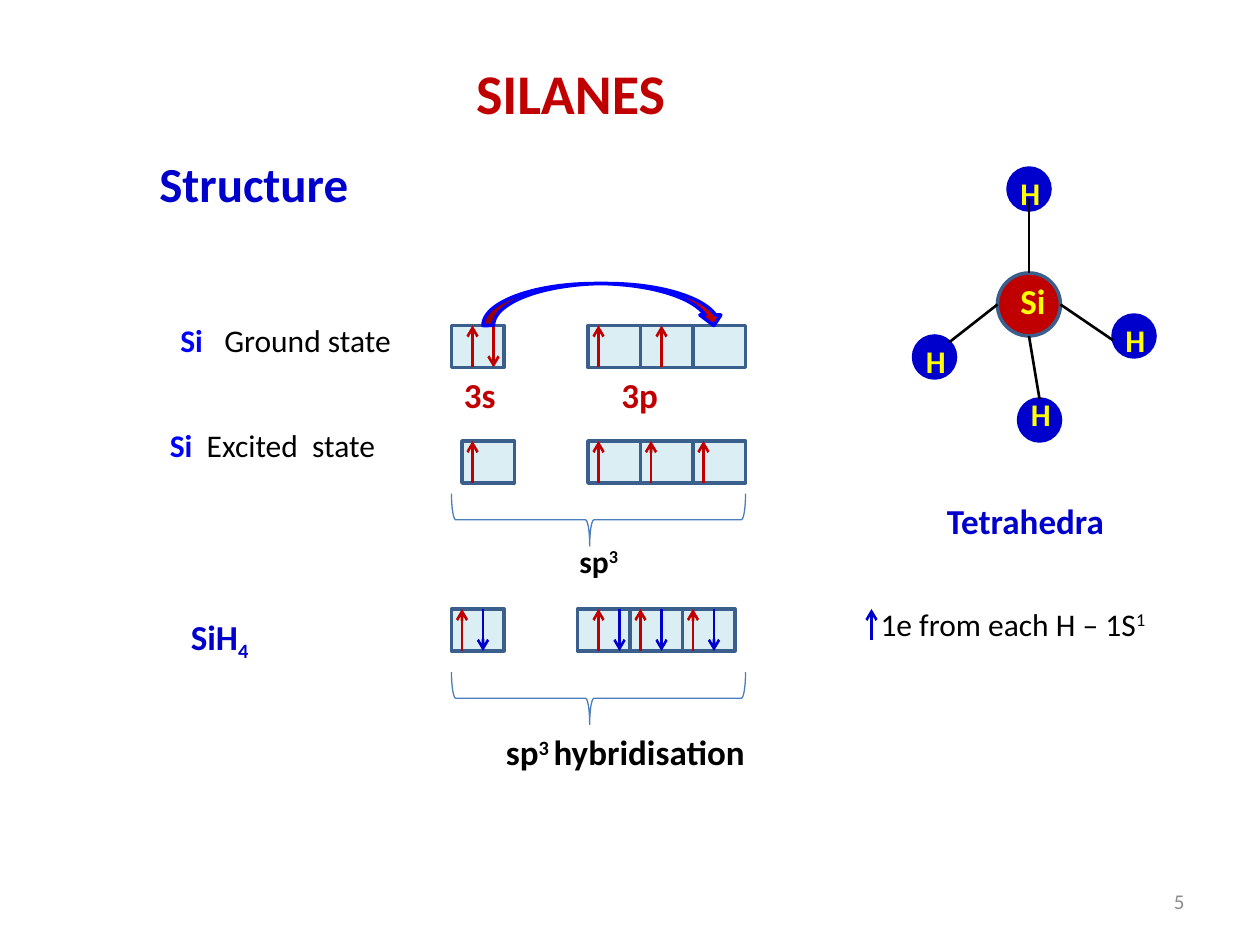
from pptx import Presentation
from pptx.dml.color import RGBColor
from pptx.enum.shapes import MSO_CONNECTOR, MSO_SHAPE as SHAPE
from pptx.enum.text import MSO_ANCHOR, MSO_AUTO_SIZE, PP_ALIGN
from pptx.oxml.ns import qn
from pptx.util import Pt
from lxml.etree import SubElement

PX = 7620  # EMU per px, 120 px to the inch
RED = RGBColor(0xC0, 0x00, 0x00)
NAVY = RGBColor(0x00, 0x00, 0xCC)
BLUE = RGBColor(0x00, 0x00, 0xFF)
BLACK = RGBColor(0x00, 0x00, 0x00)
YELLOW = RGBColor(0xFF, 0xFF, 0x00)
GREY = RGBColor(0x8C, 0x8C, 0x8C)
PALE = RGBColor(0xDB, 0xEE, 0xF4)
STEEL = RGBColor(0x3A, 0x5F, 0x8C)
BRACE = RGBColor(0x4B, 0x7E, 0xBC)

# Labels: (left, top, width, height), size, spans of (text, colour, bold, baseline)
TITLE = ((440, 50, 214, 77), 32, [("SILANES", RED, True, 0), (" ", RED, False, 0)])
NUMBER = ((860, 834, 280, 48), 12, [("5", GREY, False, 0)])
HYDROGEN_NOTE = ((820, 570, 328, 48), 18,
                 [(" 1e from each H – 1S", BLACK, False, 0), ("1", BLACK, False, 30)])
LABELS = [
    ((140, 140, 206, 68), 28, [("Structure", NAVY, True, 0)]),
    ((160, 300, 240, 48), 18, [("Si  ", BLUE, True, 0), (" Ground state", BLACK, False, 0)]),
    ((150, 400, 228, 48), 18, [("Si ", BLUE, True, 0), (" Excited  state", BLACK, False, 0)]),
    ((170, 580, 82, 53), 20, [("SiH", NAVY, True, 0), ("4", NAVY, True, -25)]),
    ((430, 350, 55, 53), 20, [("3s", RED, True, 0)]),
    ((580, 350, 59, 53), 20, [("3p", RED, True, 0)]),
    ((540, 510, 62, 48), 18, [("sp", BLACK, True, 0), ("3", BLACK, True, 30)]),
    ((470, 690, 264, 53), 20, [("sp", BLACK, True, 0), ("3 ", BLACK, True, 30),
                               ("hybridisation", BLACK, True, 0)]),
    ((890, 470, 175, 53), 20, [("Tetrahedra", NAVY, True, 0)]),
]

# Orbital rows: top, s box left, first p box left, x of up arrows, x of down arrows, down colour
ORBITAL_W, ORBITAL_H = 50, 40
ROWS = [
    (310, 430, 560, [450, 570, 630], [470], RED),
    (420, 440, 560, [450, 570, 620, 670], [], RED),
    (580, 430, 550, [440, 570, 610, 660], [460, 590, 630, 680], NAVY),
]
BRACE_TOPS = [355, 525]

# Molecule: hydrogen (left, top, label top) and bonds
HYDROGENS = [(960, 160, 160), (1060, 300, 300), (970, 380, 370), (870, 320, 320)]
BONDS = [(980, 190, 980, 260), (1010, 290, 1060, 324),
         (980, 320, 990, 380), (950, 290, 904, 326)]

deck = Presentation()
deck.slide_width, deck.slide_height = 1200 * PX, 900 * PX
page = deck.slides.add_slide(deck.slide_layouts[6])


def scaled(lengths):
    return [length * PX for length in lengths]


def add_label(place, size, spans, align=PP_ALIGN.LEFT, wrap=False):
    box = page.shapes.add_textbox(*scaled(place))
    frame = box.text_frame
    frame.word_wrap = wrap
    frame.auto_size = MSO_AUTO_SIZE.SHAPE_TO_FIT_TEXT
    para = frame.paragraphs[0]
    para.alignment = align
    for text, colour, bold, baseline in spans:
        span = para.add_run()
        span.text = text
        font = span.font
        font.name, font.size, font.bold = "Calibri", Pt(size), bold
        font.color.rgb = colour
        if baseline:
            span._r.get_or_add_rPr().set("baseline", str(baseline * 1000))
    return box


def add_figure(kind, place, fill, line, weight=2):
    figure = page.shapes.add_shape(kind, *scaled(place))
    figure.shadow.inherit = False
    if fill is None:
        figure.fill.background()
    else:
        figure.fill.solid()
        figure.fill.fore_color.rgb = fill
    figure.line.color.rgb = line
    figure.line.width = Pt(weight)
    return figure


def add_line(ends, colour, arrow=False):
    line = page.shapes.add_connector(MSO_CONNECTOR.STRAIGHT, *scaled(ends))
    line.line.color.rgb = colour
    line.line.width = Pt(1.5)
    if arrow:
        SubElement(line.line._get_or_add_ln(), qn("a:tailEnd"), type="arrow")
    SubElement(line._element.spPr, qn("a:effectLst"))


# Title, labels and slide number
add_label(*TITLE, align=PP_ALIGN.CENTER).text_frame.paragraphs[0].runs[1].font.size = Pt(18)
for label in LABELS:
    add_label(*label)
add_label(*HYDROGEN_NOTE, wrap=True)
number = add_label(*NUMBER, align=PP_ALIGN.RIGHT, wrap=True).text_frame
number.auto_size = MSO_AUTO_SIZE.NONE
number.vertical_anchor = MSO_ANCHOR.MIDDLE

# Orbital boxes with their electrons
for top, s_left, p_left, ups, downs, down_colour in ROWS:
    bottom = top + ORBITAL_H
    for left in [s_left] + [p_left + i * ORBITAL_W for i in range(3)]:
        add_figure(SHAPE.RECTANGLE, (left, top, ORBITAL_W, ORBITAL_H), PALE, STEEL)
    for x in ups:
        add_line((x, bottom, x, top), RED, arrow=True)
    for x in downs:
        add_line((x, top, x, bottom), down_colour, arrow=True)
add_line((830, 610, 830, 580), NAVY, arrow=True)

# Promotion arrow and hybridisation braces
add_figure(SHAPE.CURVED_DOWN_ARROW, (460, 270, 230, 40), RED, BLUE)
for top in BRACE_TOPS:
    brace = add_figure(SHAPE.LEFT_BRACE, (545, top, 50, 280), None, BRACE, 0.75)
    brace.rotation = 270
    brace.adjustments[0], brace.adjustments[1] = 0.08, 0.47

# Tetrahedral molecule
add_figure(SHAPE.OVAL, (950, 260, 60, 60), RED, STEEL)
for left, top, label_top in HYDROGENS:
    add_figure(SHAPE.OVAL, (left, top, 40, 40), NAVY, NAVY)
    add_label((left, label_top, 43, 48), 18, [("H", YELLOW, True, 0)])
for bond in BONDS:
    add_line(bond, BLACK)
add_label((960, 260, 48, 53), 20, [("Si", YELLOW, True, 0)])

deck.save("out.pptx")
